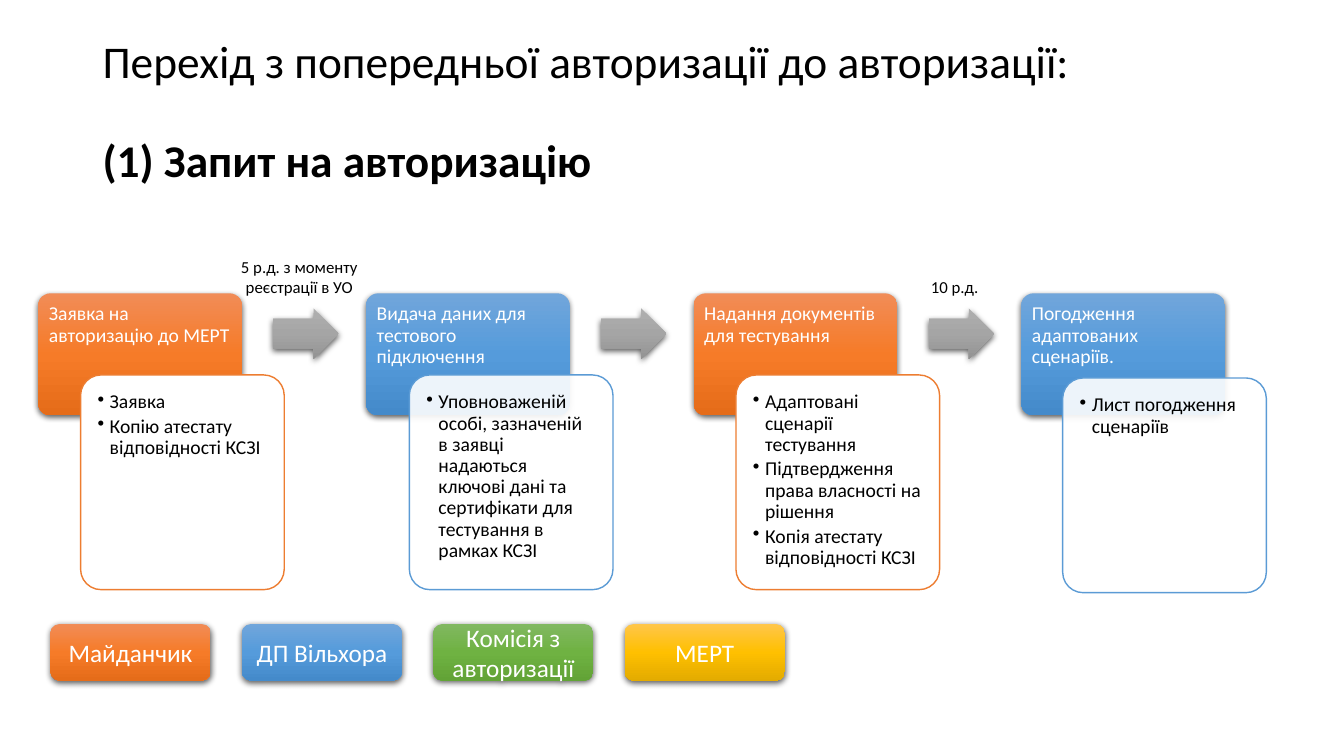
"""Build the slide on the move from preliminary authorization to authorization."""
from dataclasses import dataclass

from pptx import Presentation, oxml
from pptx import util as u
from pptx.dml.color import RGBColor
from pptx.enum import shapes, text
from pptx.oxml import ns

WIDTH, HEIGHT = u.Inches(13.33), u.Inches(7.5)
FONT = "Calibri"
COLOURS = {"ink": "000000", "paper": "FFFFFF", "orange": "ED7D31", "blue": "5B9BD5"}
GRADIENTS = {
    "orange": ("F18C57", "F67B28", "E56C19"),
    "blue": ("71A6DB", "559BDB", "448ACA"),
    "green": ("81B861", "6FB242", "62A336"),
    "gold": ("FFC64B", "FFC000", "E3AB00"),
    "grey": ("AFAFAF", "A5A5A5", "939393"),
}
STAGE_LEFT, STAGE_STEP, STAGE_WIDTH = 2.85, 24.38, 15.15
ARROW_SHIFT, NOTE_SHIFT, NOTE_BOTTOM = 17.48, 13.08, 40
LEGEND_LEFT, LEGEND_STEP = 3.75, 14.24


@dataclass
class Box:
    """Place on the slide, in percent of its width and height."""
    left: float
    top: float
    width: float
    height: float

    def lengths(self) -> tuple[int, int, int, int]:
        return (int(WIDTH * self.left / 100), int(HEIGHT * self.top / 100),
                int(WIDTH * self.width / 100), int(HEIGHT * self.height / 100))


@dataclass
class Stage:
    """One step of the process with its card and the wait after it."""
    heading: str
    items: list[str]
    colour: str
    card_shift: float = 3.15
    card_top: float = 49.6
    opacity: int = 100
    note: str = ""
    note_height: float = 4


@dataclass
class Actor:
    """One entry of the legend."""
    name: str
    colour: str


STAGES = [
    Stage("Заявка на авторизацію до МЕРТ",
          ["Заявка", "Копію атестату відповідності КСЗІ"], "orange",
          note="5 р.д. з моменту реєстрації в УО", note_height=6.67),
    Stage("Видача даних для тестового підключення",
          ["Уповноваженій особі, зазначеній в заявці надаються ключові дані "
           "та сертифікати для тестування в рамках КСЗІ"], "blue", 3.23, opacity=90),
    Stage("Надання документів для тестування",
          ["Адаптовані сценарії тестування", "Підтвердження права власності на рішення",
           "Копія атестату відповідності КСЗІ"], "orange", note="10 р.д."),
    Stage("Погодження адаптованих сценаріїв.", ["Лист погодження сценаріїв"],
          "blue", 3.08, 50, 90),
]
ACTORS = [Actor("Майданчик", "orange"), Actor("ДП Вільхора", "blue"),
          Actor("Комісія з авторизації", "green"), Actor("МЕРТ", "gold")]


def add_run(paragraph, words: str, size: float, colour: str = "ink", bold: bool = False) -> None:
    run = paragraph.add_run()
    run.text = words
    run.font.name, run.font.size, run.font.bold = FONT, u.Pt(size), bold
    run.font.color.rgb = RGBColor.from_string(COLOURS[colour])


def set_frame(frame, anchor, sides: float = 0.1, ends: float = 0.05) -> None:
    frame.word_wrap = True
    frame.vertical_anchor = anchor
    frame.margin_left = frame.margin_right = u.Inches(sides)
    frame.margin_top = frame.margin_bottom = u.Inches(ends)


def add_raised(slide, kind, box: Box, colour: str):
    shape = slide.shapes.add_shape(kind, *box.lengths())
    shape.shadow.inherit = False
    shape.line.fill.background()
    shape.fill.background()
    properties = shape._element.spPr
    stops = "".join(f'<a:gs pos="{position * 50000}"><a:srgbClr val="{stop}"/></a:gs>'
                    for position, stop in enumerate(GRADIENTS[colour]))
    properties.replace(properties.find(ns.qn("a:noFill")), oxml.parse_xml(
        f'<a:gradFill {ns.nsdecls("a")}><a:gsLst>{stops}</a:gsLst>'
        '<a:lin ang="5400000" scaled="0"/></a:gradFill>'))
    properties.find(ns.qn("a:effectLst")).append(oxml.parse_xml(
        f'<a:outerShdw {ns.nsdecls("a")} blurRad="57150" dist="19050" dir="5400000" '
        'algn="ctr" rotWithShape="0"><a:srgbClr val="000000"><a:alpha val="63000"/>'
        '</a:srgbClr></a:outerShdw>'))
    return shape


def add_title(slide) -> None:
    title = slide.shapes.title
    title.left, title.top, title.width, title.height = Box(6.88, 5.33, 86.25, 19.33).lengths()
    frame = title.text_frame
    set_frame(frame, text.MSO_ANCHOR.MIDDLE)
    first, second = frame.paragraphs[0], frame.add_paragraph()
    add_run(first, "Перехід з попередньої авторизації до авторизації:", 32.4)
    add_run(second, "(1) Запит на авторизацію", 32.4, bold=True)
    for paragraph in (first, second):
        paragraph.alignment = text.PP_ALIGN.LEFT
        paragraph.line_spacing = 0.9
    first.space_before = u.Pt(0)
    second.space_before = u.Pt(35.5)


def add_heading(slide, stage: Stage, left: float) -> None:
    shape = add_raised(slide, shapes.MSO_SHAPE.ROUNDED_RECTANGLE,
                       Box(left, 38.8, STAGE_WIDTH, 16.13), stage.colour)
    shape.adjustments[0] = 0.1
    set_frame(shape.text_frame, text.MSO_ANCHOR.TOP, 0.07, 0.07)
    paragraph = shape.text_frame.paragraphs[0]
    paragraph.alignment = text.PP_ALIGN.LEFT
    paragraph.line_spacing = 0.9
    add_run(paragraph, stage.heading, 14, "paper")


def add_card(slide, stage: Stage, left: float) -> None:
    box = Box(left + stage.card_shift, stage.card_top, STAGE_WIDTH, 28.4)
    shape = slide.shapes.add_shape(shapes.MSO_SHAPE.ROUNDED_RECTANGLE, *box.lengths())
    shape.adjustments[0] = 0.1
    shape.shadow.inherit = False
    shape.fill.solid()
    shape.fill.fore_color.rgb = RGBColor.from_string(COLOURS["paper"])
    if stage.opacity < 100:
        shape._element.spPr.find(ns.qn("a:solidFill"))[0].append(oxml.parse_xml(
            f'<a:alpha {ns.nsdecls("a")} val="{stage.opacity * 1000}"/>'))
    shape.line.color.rgb = RGBColor.from_string(COLOURS[stage.colour])
    shape.line.width = u.Pt(1)
    frame = shape.text_frame
    set_frame(frame, text.MSO_ANCHOR.TOP, 0.11, 0.11)
    for index, item in enumerate(stage.items):
        paragraph = frame.add_paragraph() if index else frame.paragraphs[0]
        paragraph.alignment = text.PP_ALIGN.LEFT
        paragraph.line_spacing = 0.9
        paragraph.space_after = u.Pt(2.5)
        properties = paragraph._p.get_or_add_pPr()
        properties.set("marL", str(u.Inches(0.12)))
        properties.set("indent", str(u.Inches(-0.12)))
        properties.append(oxml.parse_xml(f'<a:buChar {ns.nsdecls("a")} char="•"/>'))
        add_run(paragraph, item, 14)


def add_arrow(slide, left: float) -> None:
    shape = add_raised(slide, shapes.MSO_SHAPE.RIGHT_ARROW,
                       Box(left + ARROW_SHIFT, 40.8, 4.88, 6.67), "grey")
    shape.adjustments[0] = 0.6


def add_note(slide, stage: Stage, left: float) -> None:
    box = Box(left + NOTE_SHIFT, NOTE_BOTTOM - stage.note_height, 12.68, stage.note_height)
    frame = slide.shapes.add_textbox(*box.lengths()).text_frame
    set_frame(frame, text.MSO_ANCHOR.TOP)
    frame.auto_size = text.MSO_AUTO_SIZE.SHAPE_TO_FIT_TEXT
    frame.paragraphs[0].alignment = text.PP_ALIGN.CENTER
    add_run(frame.paragraphs[0], stage.note, 12)


def add_actor(slide, actor: Actor, left: float) -> None:
    shape = add_raised(slide, shapes.MSO_SHAPE.ROUNDED_RECTANGLE,
                       Box(left, 82.53, 11.93, 7.5), actor.colour)
    set_frame(shape.text_frame, text.MSO_ANCHOR.MIDDLE)
    paragraph = shape.text_frame.paragraphs[0]
    paragraph.alignment = text.PP_ALIGN.CENTER
    add_run(paragraph, actor.name, 18, "paper")


def main() -> None:
    presentation = Presentation()
    presentation.slide_width, presentation.slide_height = WIDTH, HEIGHT
    slide = presentation.slides.add_slide(presentation.slide_layouts.get_by_name("Title Only"))
    add_title(slide)
    for index, stage in enumerate(STAGES):
        left = STAGE_LEFT + index * STAGE_STEP
        add_heading(slide, stage, left)
        add_card(slide, stage, left)
        if index < len(STAGES) - 1:
            add_arrow(slide, left)
        if stage.note:
            add_note(slide, stage, left)
    for index, actor in enumerate(ACTORS):
        add_actor(slide, actor, LEGEND_LEFT + index * LEGEND_STEP)
    presentation.save("out.pptx")


if __name__ == "__main__":
    main()
